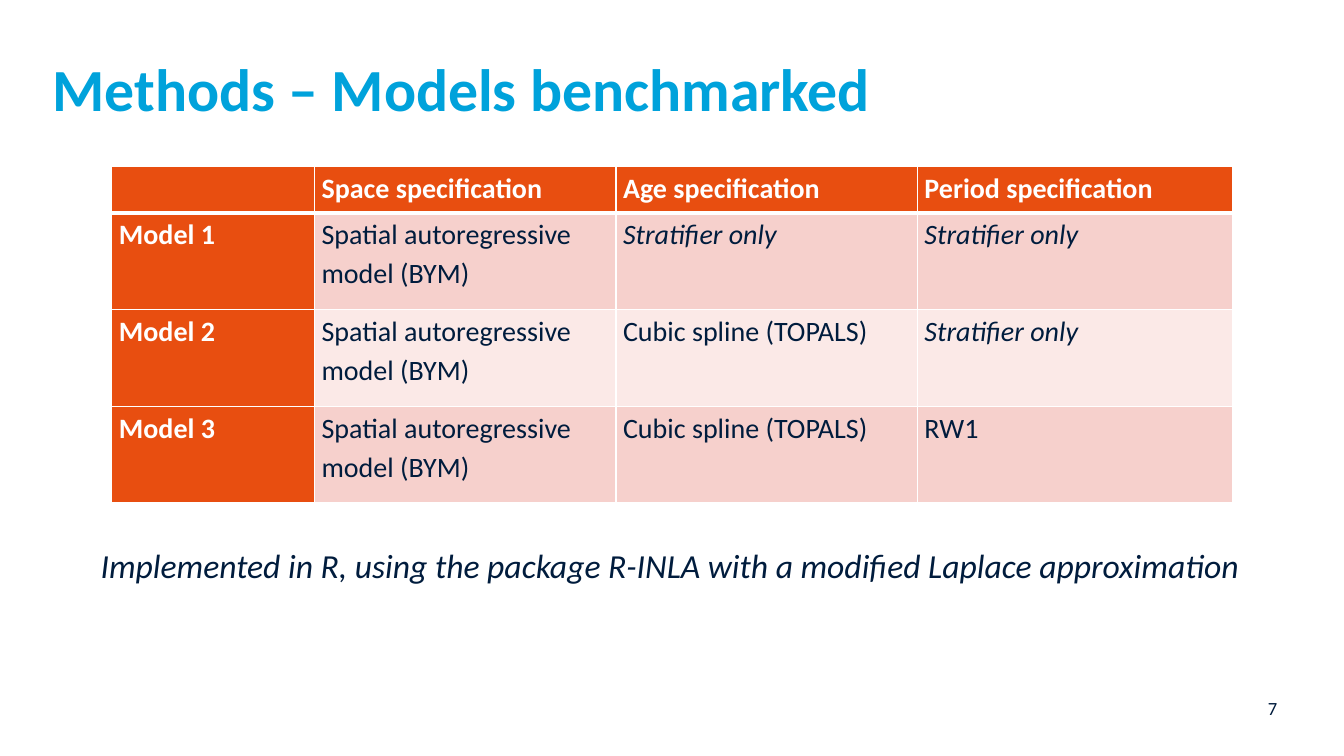
from pptx import Presentation, util as u
from pptx.dml.color import RGBColor
from pptx.enum import text as t
from pptx.oxml import parse_xml
from pptx.oxml.ns import nsdecls

TITLE = "Methods – Models benchmarked"
NOTE = "Implemented in R, using the package R-INLA with a modified Laplace approximation"
PAGE = "7"
SPACE = "Spatial autoregressive model (BYM)"
AGE = "Cubic spline (TOPALS)"
NONE = "Stratifier only"
MODELS = [
    ("", "Space specification", "Age specification", "Period specification"),
    ("Model 1", SPACE, NONE, NONE),
    ("Model 2", SPACE, AGE, NONE),
    ("Model 3", SPACE, AGE, "RW1"),
]
COLS = (2.01, 2.99, 2.99, 3.13)
ROWS = (0.46, 0.96, 0.96, 0.96)

THEME = {
    "font": "Calibri",
    "blue": "00A2DB", "navy": "001C3D", "white": "FFFFFF",
    "head": "E84E10", "bands": ("FBE9E7", "F6D0CC"),
    "title": 42.7, "cell": 20, "note": 24, "page": 13.3,
}


def put(frame, words, size, color, form=None, **font):
    """Write one styled paragraph, with frame and paragraph formats."""
    for key, val in (form or {}).items():
        setattr(frame, key, val)
    par = frame.paragraphs[0]
    run = par.add_run()
    run.text = words
    look = {"name": THEME["font"], "size": u.Pt(THEME[size]), **font}
    for key, val in look.items():
        setattr(run.font, key, val)
    run.font.color.rgb = RGBColor.from_string(THEME[color])
    return par


def edge(cell, side, width):
    cell._tc.get_or_add_tcPr().append(parse_xml(
        f'<a:ln{side} {nsdecls("a")} w="{u.Pt(width)}"><a:solidFill>'
        f'<a:srgbClr val="{THEME["white"]}"/></a:solidFill></a:ln{side}>'))


def fill_cell(cell, words, row, col):
    head = row == 0 or col == 0
    thick = {"T": 3 if row == 1 else 1, "B": 3 if row == 0 else 1}
    for side in "LRTB":
        edge(cell, side, thick.get(side, 1))
    cell.fill.solid()
    color = THEME["head"] if head else THEME["bands"][row % 2]
    cell.fill.fore_color.rgb = RGBColor.from_string(color)
    form = {"margin_left": 0.07, "margin_right": 0.07,
            "margin_top": 0, "margin_bottom": 0}
    for key, val in form.items():
        setattr(cell, key, u.Inches(val))
    if words:
        par = put(cell.text_frame, words, "cell", "white" if head else "navy",
                  bold=head, italic=words == NONE)
        par.line_spacing = 1.15
        par.space_after = u.Pt(6)


def add_models(slide):
    place = [u.Inches(n) for n in (1.11, 1.65, sum(COLS), sum(ROWS))]
    table = slide.shapes.add_table(len(ROWS), len(COLS), *place).table
    for col, wide in zip(table.columns, COLS):
        col.width = u.Inches(wide)
    for row, high in zip(table.rows, ROWS):
        row.height = u.Inches(high)
    for r, line in enumerate(MODELS):
        for c, words in enumerate(line):
            fill_cell(table.cell(r, c), words, r, c)


def main():
    deck = Presentation()
    deck.slide_width, deck.slide_height = u.Inches(13.33), u.Inches(7.5)
    slide = deck.slides.add_slide(deck.slide_layouts[5])
    flat = {"margin_left": 0, "margin_right": 0, "margin_top": 0,
            "margin_bottom": 0, "word_wrap": True,
            "auto_size": t.MSO_AUTO_SIZE.NONE}

    title = slide.shapes.title
    place = {"left": 0.52, "top": 0.45, "width": 12.14, "height": 0.83}
    for key, val in place.items():
        setattr(title, key, u.Inches(val))
    form = {**flat, "vertical_anchor": t.MSO_ANCHOR.MIDDLE}
    par = put(title.text_frame, TITLE, "title", "blue", form, bold=True)
    par.alignment = t.PP_ALIGN.LEFT

    page = slide.shapes.add_textbox(*map(u.Inches, (12.13, 6.91, 0.54, 0.4)))
    par = put(page.text_frame, PAGE, "page", "navy", flat)
    par.alignment = t.PP_ALIGN.RIGHT

    add_models(slide)

    note = slide.shapes.add_textbox(*map(u.Inches, (0.9, 5.36, 11.54, 0.5)))
    form = {"word_wrap": False, "auto_size": t.MSO_AUTO_SIZE.SHAPE_TO_FIT_TEXT}
    put(note.text_frame, NOTE, "note", "navy", form, italic=True)

    deck.save("out.pptx")


if __name__ == "__main__":
    main()
